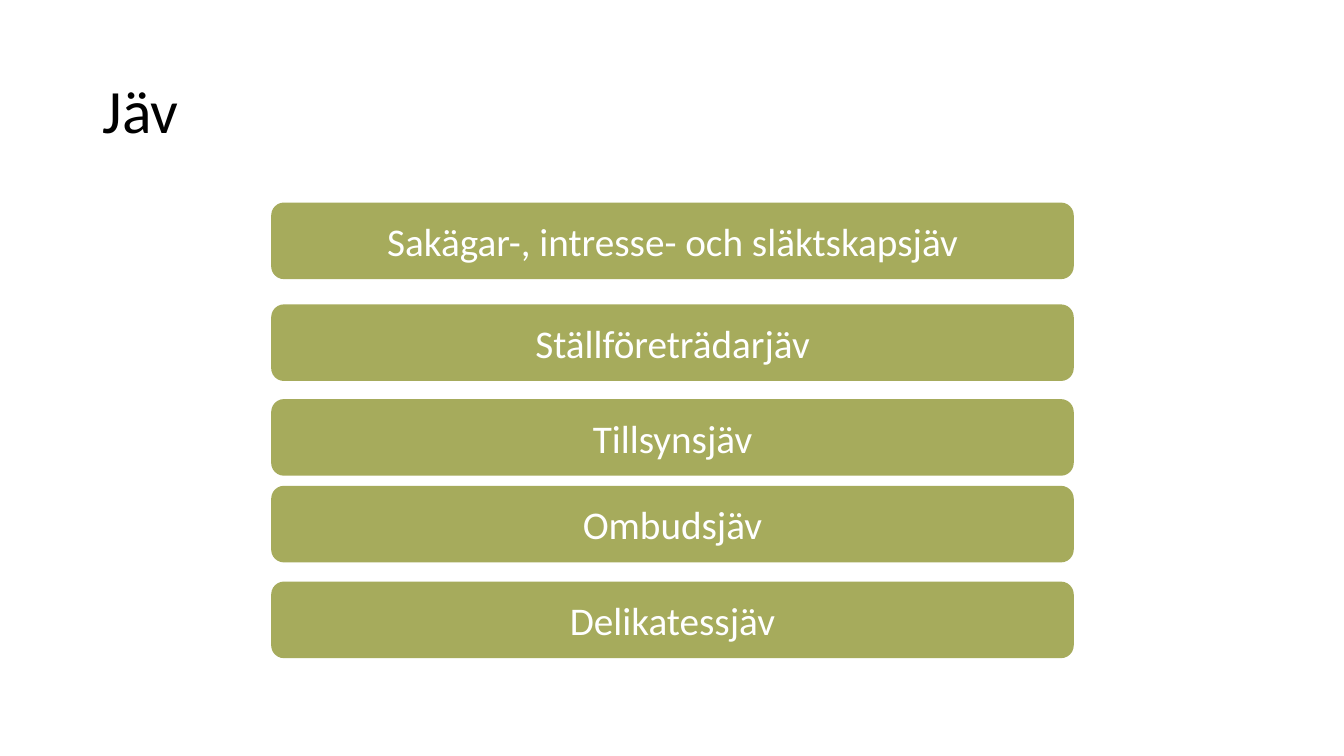
from dataclasses import dataclass
from pptx import Presentation
from pptx.dml.color import RGBColor as RGB
from pptx.enum.shapes import MSO_SHAPE as Form
from pptx.enum.text import MSO_ANCHOR as Anchor, PP_ALIGN as Align
from pptx.util import Inches, Pt

TITLE = "Jäv"
BARS = [
    ("Sakägar-, intresse- och släktskapsjäv", 2.01),
    ("Ställföreträdarjäv", 3.02),
    ("Tillsynsjäv", 3.96),
    ("Ombudsjäv", 4.82),
    ("Delikatessjäv", 5.77),
]


@dataclass(frozen=True)
class Theme:
    font: str = "Calibri"
    ink: str = "000000"
    olive: str = "A6AB5C"
    white: str = "FFFFFF"
    head: int = 44
    body: int = 28


theme = Theme()


def write(shape, text, size, color, align):
    frame = shape.text_frame
    frame.word_wrap = True
    frame.vertical_anchor = Anchor.MIDDLE
    para = frame.paragraphs[0]
    para.alignment = align
    run = para.add_run()
    run.text = text
    run.font.name = theme.font
    run.font.size = Pt(size)
    run.font.color.rgb = RGB.from_string(color)
    return para


def add_title(slide):
    title = slide.shapes.title
    title.left, title.top = Inches(0.92), Inches(0.4)
    title.width, title.height = Inches(11.5), Inches(1.45)
    para = write(title, TITLE, theme.head, theme.ink, Align.LEFT)
    para.line_spacing = 0.9


def add_bar(slide, text, top):
    bar = slide.shapes.add_shape(
        Form.ROUNDED_RECTANGLE,
        Inches(2.69), Inches(top), Inches(7.96), Inches(0.76))
    bar.shadow.inherit = False
    bar.fill.solid()
    bar.fill.fore_color.rgb = RGB.from_string(theme.olive)
    bar.line.fill.background()
    write(bar, text, theme.body, theme.white, Align.CENTER)


def main():
    deck = Presentation()
    deck.slide_width, deck.slide_height = Inches(13.33), Inches(7.5)
    slide = deck.slides.add_slide(deck.slide_layouts[5])
    add_title(slide)
    for text, top in BARS:
        add_bar(slide, text, top)
    deck.save("out.pptx")


if __name__ == "__main__":
    main()
